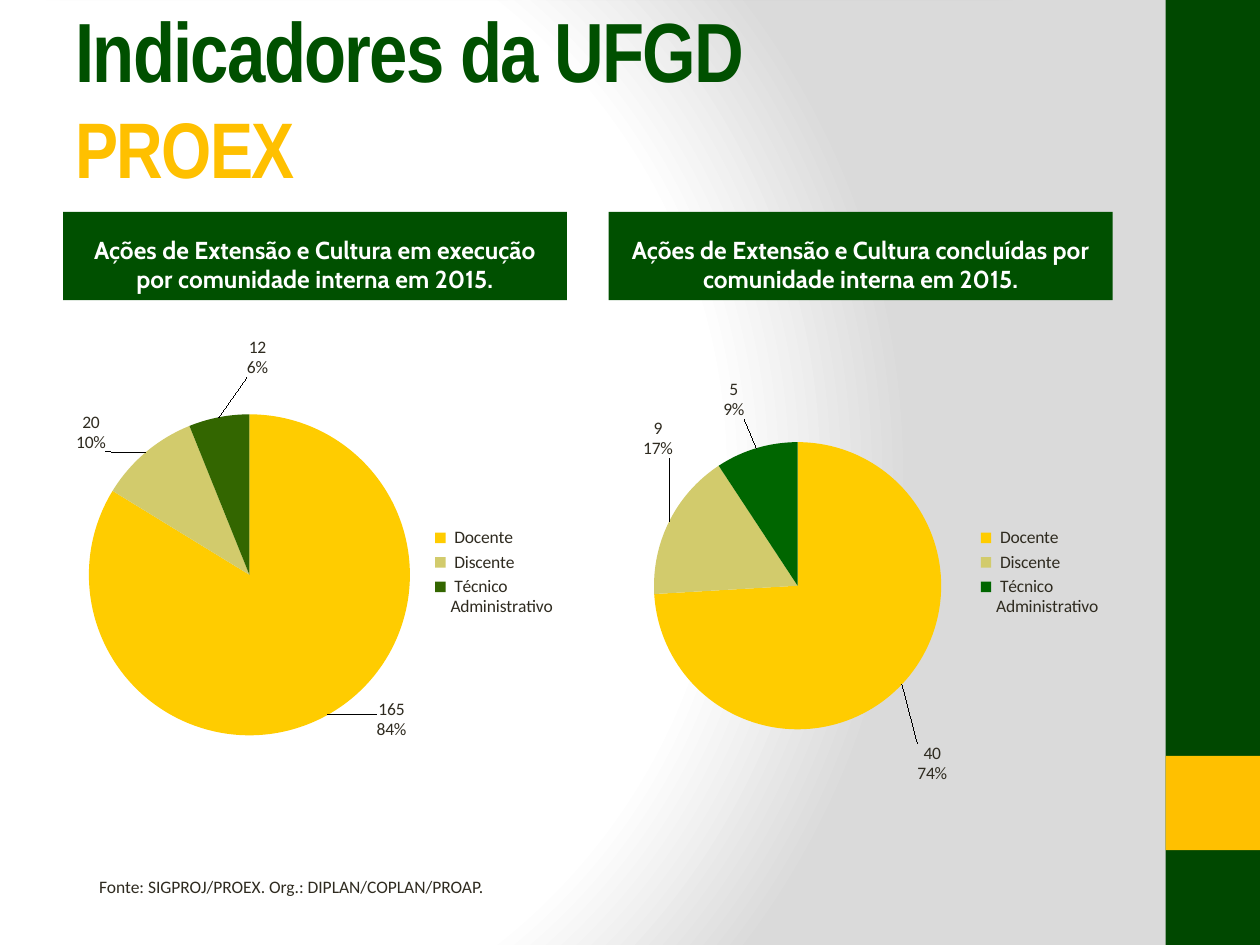
from pptx import Presentation
from pptx.chart.data import CategoryChartData
from pptx.dml.color import RGBColor
from pptx.enum.chart import XL_CHART_TYPE, XL_LEGEND_POSITION
from pptx.enum.shapes import MSO_SHAPE
from pptx.enum.text import MSO_ANCHOR, MSO_AUTO_SIZE, PP_ALIGN
from pptx.oxml import parse_xml
from pptx.oxml.ns import nsdecls, qn
from pptx.util import Cm, Pt

PIE = XL_CHART_TYPE.PIE
LEGEND_RIGHT = XL_LEGEND_POSITION.RIGHT
RECTANGLE = MSO_SHAPE.RECTANGLE
MIDDLE, BOTTOM = MSO_ANCHOR.MIDDLE, MSO_ANCHOR.BOTTOM
NO_AUTOFIT = MSO_AUTO_SIZE.NONE
LEFT, CENTER = PP_ALIGN.LEFT, PP_ALIGN.CENTER

BAND_GREEN = RGBColor(0x00, 0x48, 0x00)
GREEN = RGBColor(0x00, 0x50, 0x00)
GOLD = RGBColor(0xFF, 0xC0, 0x00)
YELLOW = RGBColor(0xFF, 0xCC, 0x00)
KHAKI = RGBColor(0xD2, 0xCB, 0x6C)
OLIVE = RGBColor(0x33, 0x66, 0x00)
LEAF = RGBColor(0x00, 0x66, 0x00)
DARK = RGBColor(0x2F, 0x2B, 0x20)
WHITE = RGBColor(0xFF, 0xFF, 0xFF)

CATEGORIES = [" Docente", " Discente", " Técnico Administrativo"]
COLUMN_WIDTH = Cm(10.16)

BACKGROUND = f"""<a:gradFill {nsdecls('a')} rotWithShape="1"><a:gsLst>
<a:gs pos="0"><a:srgbClr val="FFFFFF"/></a:gs>
<a:gs pos="75000"><a:srgbClr val="FFFFFF"/></a:gs>
<a:gs pos="100000"><a:srgbClr val="DADADA"/></a:gs></a:gsLst>
<a:path path="circle"><a:fillToRect l="20000" t="50000" r="100000" b="50000"/></a:path>
</a:gradFill>"""
SHADOW = f"""<a:effectLst {nsdecls('a')}><a:outerShdw blurRad="190500" dist="152400"
dir="5400000" sx="90000" sy="-19000" rotWithShape="0"><a:srgbClr val="000000">
<a:alpha val="25000"/></a:srgbClr></a:outerShdw></a:effectLst>"""
LABEL_PARTS = """<c:dLblPos val="outEnd"/><c:showLegendKey val="0"/><c:showVal val="1"/>
<c:showCatName val="0"/><c:showSerName val="0"/><c:showPercent val="1"/>
<c:showBubbleSize val="0"/><c:separator>\n</c:separator>"""

# heading, values, last slice colour, pie frame (x, y, w, h), label offsets
COLUMNS = [
    (Cm(1.27), "Ações de Extensão e Cultura em execução por comunidade interna em 2015.",
     (165, 20, 12), OLIVE, (0.05, 0.21, 0.64, 0.59),
     [(0.09, -0.04), (-0.07, 0.01), (0.1, -0.06)]),
    (Cm(12.27), "Ações de Extensão e Cultura concluídas por comunidade interna em 2015.",
     (40, 9, 5), LEAF, (0.09, 0.26, 0.57, 0.53),
     [(0.02, 0.1), (0.02, -0.11), (-0.02, -0.04)]),
]


def add_run(paragraph, text, font_name, size, color, bold=False):
    run = paragraph.add_run()
    run.text = text
    run.font.name = font_name
    run.font.size = Pt(size)
    run.font.color.rgb = color
    run.font.bold = bold
    return run


def frame_layout(x, y, width, height, target=""):
    """Manual chart layout, in fractions of the chart area."""
    return parse_xml(
        f'<c:layout {nsdecls("c")}><c:manualLayout>{target}'
        '<c:xMode val="edge"/><c:yMode val="edge"/>'
        f'<c:x val="{x}"/><c:y val="{y}"/><c:w val="{width}"/><c:h val="{height}"/>'
        '</c:manualLayout></c:layout>')


presentation = Presentation()
presentation.slide_width = Cm(25.4)
presentation.slide_height = Cm(19.05)
slide = presentation.slides.add_slide(presentation.slide_layouts.get_by_name("Comparison"))
placeholders = {holder.placeholder_format.idx: holder for holder in slide.placeholders}
for index in (2, 4):
    element = placeholders[index].element
    element.getparent().remove(element)

slide.background.fill.gradient()
gradient = slide.element.find(".//" + qn("a:gradFill"))
gradient.getparent().replace(gradient, parse_xml(BACKGROUND))

# Side band
for top, height, color in [(0, 19.05, BAND_GREEN), (15.24, 1.9, GOLD)]:
    band = slide.shapes.add_shape(RECTANGLE, Cm(23.5), Cm(top), Cm(1.9), Cm(height))
    band.shadow.inherit = False
    band.fill.solid()
    band.fill.fore_color.rgb = color
    band.line.fill.background()

# Title
title = slide.shapes.title
title.left, title.top, title.width, title.height = Cm(1.27), Cm(0.76), Cm(21.16), Cm(2.36)
title.text_frame.auto_size = NO_AUTOFIT
title.text_frame.vertical_anchor = MIDDLE
paragraph = title.text_frame.paragraphs[0]
paragraph.alignment = LEFT
title_runs = [add_run(paragraph, "Indicadores da UFGD", "Arial Narrow", 48, GREEN, True)]
paragraph.add_line_break()
title_runs.append(add_run(paragraph, "PROEX", "Arial Narrow", 45, GOLD, True))
for run in title_runs:
    run.font._element.set("spc", "-100")

# Headings and pies
for index, column in zip((1, 3), COLUMNS):
    left, text, values, last_color, pie_frame, offsets = column
    heading = placeholders[index]
    heading.left, heading.top = left, Cm(4.27)
    heading.width, heading.height = COLUMN_WIDTH, Cm(1.78)
    heading.fill.solid()
    heading.fill.fore_color.rgb = GREEN
    heading.element.spPr.append(parse_xml(SHADOW))
    heading.text_frame.auto_size = NO_AUTOFIT
    heading.text_frame.vertical_anchor = BOTTOM
    paragraph = heading.text_frame.paragraphs[0]
    paragraph.alignment = CENTER
    add_run(paragraph, text, "Cabin", 14, WHITE, True)

    data = CategoryChartData()
    data.categories = CATEGORIES
    data.add_series("Series 1", values)
    chart = slide.shapes.add_chart(PIE, left, Cm(6.05), COLUMN_WIDTH, Cm(10.97), data).chart
    chart.has_title = False
    chart.font.name = "Calibri"
    chart.font.size = Pt(10)
    chart.font.color.rgb = DARK
    chart.has_legend = True
    chart.legend.position = LEGEND_RIGHT
    chart.legend.include_in_layout = False
    plot = chart.plots[0]
    plot.vary_by_categories = True
    for number, color in enumerate((YELLOW, KHAKI, last_color)):
        fill = plot.series[0].points[number].format.fill
        fill.solid()
        fill.fore_color.rgb = color

    labels = "".join(
        f'<c:dLbl><c:idx val="{number}"/><c:layout><c:manualLayout>'
        f'<c:x val="{x}"/><c:y val="{y}"/></c:manualLayout></c:layout>{LABEL_PARTS}</c:dLbl>'
        for number, (x, y) in enumerate(offsets))
    chart.element.find(".//" + qn("c:cat")).addprevious(parse_xml(
        f'<c:dLbls {nsdecls("c")}>{labels}{LABEL_PARTS}<c:showLeaderLines val="1"/></c:dLbls>'))
    plot_area = chart.element.find(".//" + qn("c:plotArea"))
    for layout in plot_area.findall(qn("c:layout")):
        plot_area.remove(layout)
    plot_area.insert(0, frame_layout(*pie_frame, '<c:layoutTarget val="inner"/>'))
    legend = chart.element.find(".//" + qn("c:legend"))
    for layout in legend.findall(qn("c:layout")):
        legend.remove(layout)
    legend.find(qn("c:legendPos")).addnext(frame_layout(0.72, 0.41, 0.27, 0.18))

# Source line
source = slide.shapes.add_textbox(Cm(1.75), Cm(17.53), Cm(8.61), Cm(0.69))
source.text_frame.word_wrap = True
add_run(source.text_frame.paragraphs[0], "Fonte: SIGPROJ/PROEX. Org.: DIPLAN/COPLAN/PROAP.",
        "Calibri", 10, DARK)

presentation.save("out.pptx")
